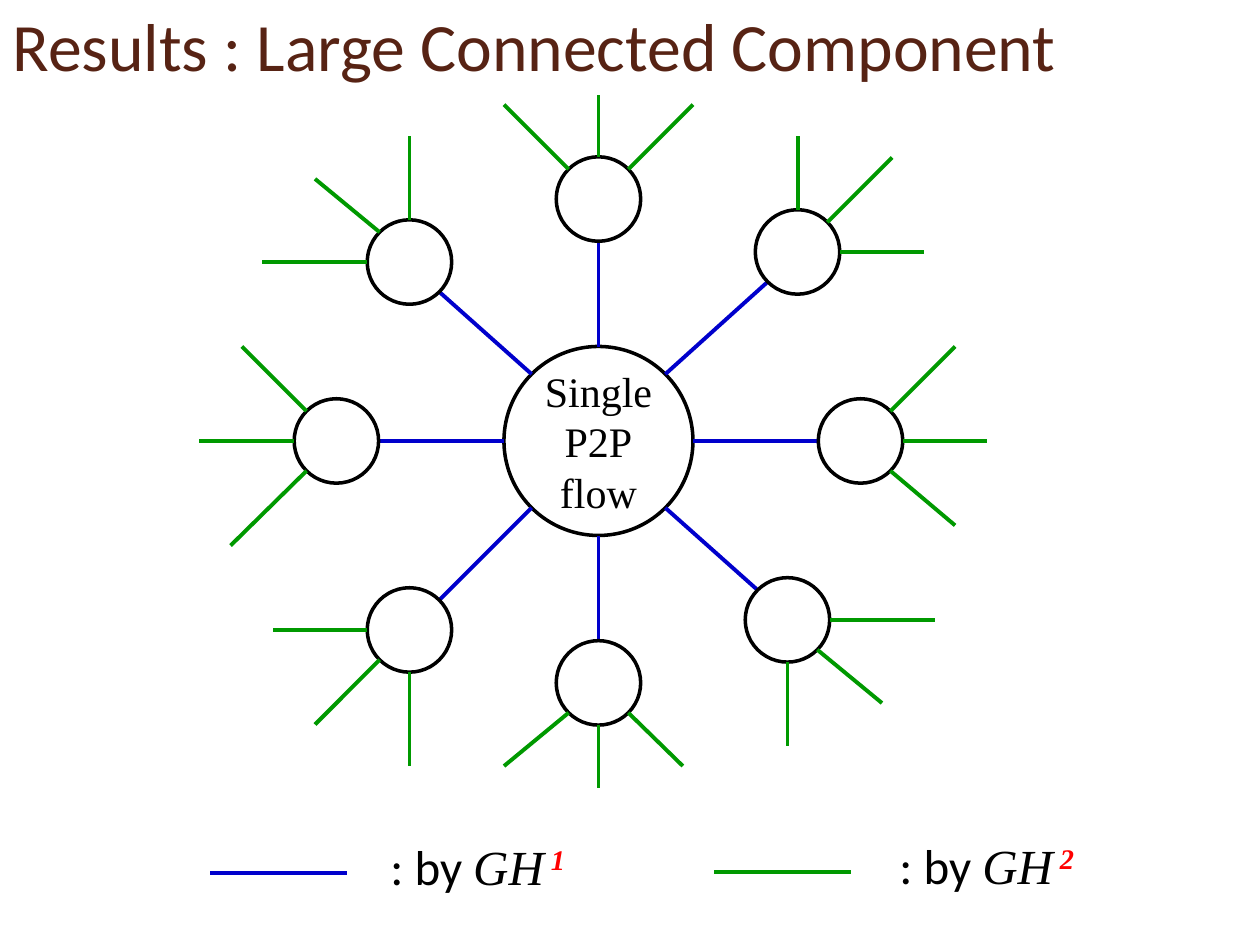
import math
from dataclasses import dataclass

from lxml import etree
from pptx import Presentation
from pptx.dml.color import RGBColor
from pptx.enum import shapes, text
from pptx.oxml import ns
from pptx.util import Inches, Pt


@dataclass(frozen=True)
class Theme:
    title: str = "572314"
    ink: str = "000000"
    paper: str = "FFFFFF"
    first: str = "0000CC"
    second: str = "009900"
    accent: str = "FF0000"
    sans: str = "Calibri"
    serif: str = "Times New Roman"
    title_size: float = 38.7
    legend_size: float = 28
    hub_size: float = 24
    gap_size: float = 16
    outline: float = 2
    link: float = 2.25


THEME = Theme()
NODE_SIZE = 0.67
HUB_BOX = (4, 2.75, 1.5, 1.5)

# Each entry: compass step (eighths of a turn clockwise from east), node centre, spoke tips.
SATELLITES = [
    (0, (6.83, 3.5), [(7.58, 2.75), (7.83, 3.5), (7.58, 4.17)]),
    (1, (6.25, 4.92), [(7.42, 4.92), (7, 5.58), (6.25, 5.92)]),
    (2, (4.75, 5.42), [(5.42, 6.08), (4.75, 6.25), (4, 6.08)]),
    (3, (3.25, 5), [(3.25, 6.08), (2.5, 5.75), (2.17, 5)]),
    (4, (2.67, 3.5), [(1.83, 4.33), (1.58, 3.5), (1.92, 2.75)]),
    (5, (3.25, 2.08), [(2.08, 2.08), (2.5, 1.42), (3.25, 1.08)]),
    (6, (4.75, 1.58), [(4, 0.83), (4.75, 0.75), (5.5, 0.83)]),
    (7, (6.33, 2), [(6.33, 1.08), (7.08, 1.25), (7.33, 2)]),
]


def add_run(paragraph, content, size, font, color, italic=False, bold=False):
    run = paragraph.add_run()
    run.text = content
    run.font.size = Pt(size)
    run.font.name = font
    run.font.color.rgb = RGBColor.from_string(color)
    run.font.italic = italic
    run.font.bold = bold
    return run


def add_line(container, start, end, color):
    ends = [Inches(value) for value in (*start, *end)]
    line = container.add_connector(shapes.MSO_CONNECTOR.STRAIGHT, *ends)
    line.line.color.rgb = RGBColor.from_string(color)
    line.line.width = Pt(THEME.link)
    etree.SubElement(line._element.spPr, ns.qn("a:effectLst"))


def add_circle(container, box):
    circle = container.add_shape(
        shapes.MSO_SHAPE.OVAL, *[Inches(value) for value in box])
    circle.shadow.inherit = False
    circle.fill.solid()
    circle.fill.fore_color.rgb = RGBColor.from_string(THEME.paper)
    circle.line.color.rgb = RGBColor.from_string(THEME.ink)
    circle.line.width = Pt(THEME.outline)
    return circle


def rim_point(center, diameter, step):
    angle = math.radians(45 * step)
    return (center[0] + diameter / 2 * math.cos(angle),
            center[1] + diameter / 2 * math.sin(angle))


def place_title(slide, box):
    title = slide.shapes.title
    title.left, title.top, title.width, title.height = map(Inches, box)
    frame = title.text_frame
    frame.word_wrap = True
    frame.auto_size = text.MSO_AUTO_SIZE.NONE
    frame.vertical_anchor = text.MSO_ANCHOR.MIDDLE
    paragraph = frame.paragraphs[0]
    paragraph.alignment = text.PP_ALIGN.LEFT
    add_run(paragraph, "Results : Large Connected Component",
            THEME.title_size, THEME.sans, THEME.title)


def place_hub(slide, box):
    frame = add_circle(slide.shapes, box).text_frame
    frame.margin_left = frame.margin_right = 0
    frame.margin_top = frame.margin_bottom = 0
    frame.word_wrap = True
    frame.vertical_anchor = text.MSO_ANCHOR.MIDDLE
    for index, word in enumerate(["Single", "P2P", "flow"]):
        paragraph = frame.paragraphs[0] if index == 0 else frame.add_paragraph()
        paragraph.alignment = text.PP_ALIGN.CENTER
        add_run(paragraph, word, THEME.hub_size, THEME.serif, THEME.ink)


def place_network(slide, box):
    left, top, width, height = box
    hub_center = (left + width / 2, top + height / 2)
    place_hub(slide, box)
    for step, center, tips in SATELLITES:
        add_line(slide.shapes, rim_point(hub_center, width, step),
                 rim_point(center, NODE_SIZE, step + 4), THEME.first)
        add_circle(slide.shapes, (center[0] - NODE_SIZE / 2,
                                  center[1] - NODE_SIZE / 2, NODE_SIZE, NODE_SIZE))
    spokes = slide.shapes.add_group_shape().shapes
    for step, center, tips in SATELLITES:
        for offset, tip in zip((-1, 0, 1), tips):
            add_line(spokes, rim_point(center, NODE_SIZE, step + offset),
                     tip, THEME.second)


def place_legend(slide, box, line_left, power, color):
    left, top, width, height = box
    legend = slide.shapes.add_group_shape().shapes
    line_y = top + 0.34
    add_line(legend, (line_left, line_y), (line_left + 1.08, line_y), color)
    label = legend.add_textbox(*[Inches(value) for value in box])
    frame = label.text_frame
    frame.word_wrap = False
    frame.auto_size = text.MSO_AUTO_SIZE.SHAPE_TO_FIT_TEXT
    paragraph = frame.paragraphs[0]
    size = THEME.legend_size
    add_run(paragraph, ": by ", size, THEME.sans, THEME.ink)
    add_run(paragraph, "GH", size, THEME.serif, THEME.ink, italic=True)
    add_run(paragraph, " ", THEME.gap_size, THEME.serif, THEME.ink, italic=True)
    exponent = add_run(paragraph, power, size, THEME.serif, THEME.accent,
                       italic=True, bold=True)
    exponent.font._element.set("baseline", "30000")


def main():
    presentation = Presentation()
    presentation.slide_width = Inches(10)
    presentation.slide_height = Inches(7.5)
    slide = presentation.slides.add_slide(presentation.slide_layouts[5])
    place_title(slide, (0, 0, 9.75, 0.7))
    place_network(slide, HUB_BOX)
    place_legend(slide, (3, 6.59, 1.79, 0.57), 1.67, "1", THEME.first)
    place_legend(slide, (7.04, 6.58, 1.62, 0.57), 5.67, "2", THEME.second)
    presentation.save("out.pptx")


if __name__ == "__main__":
    main()
